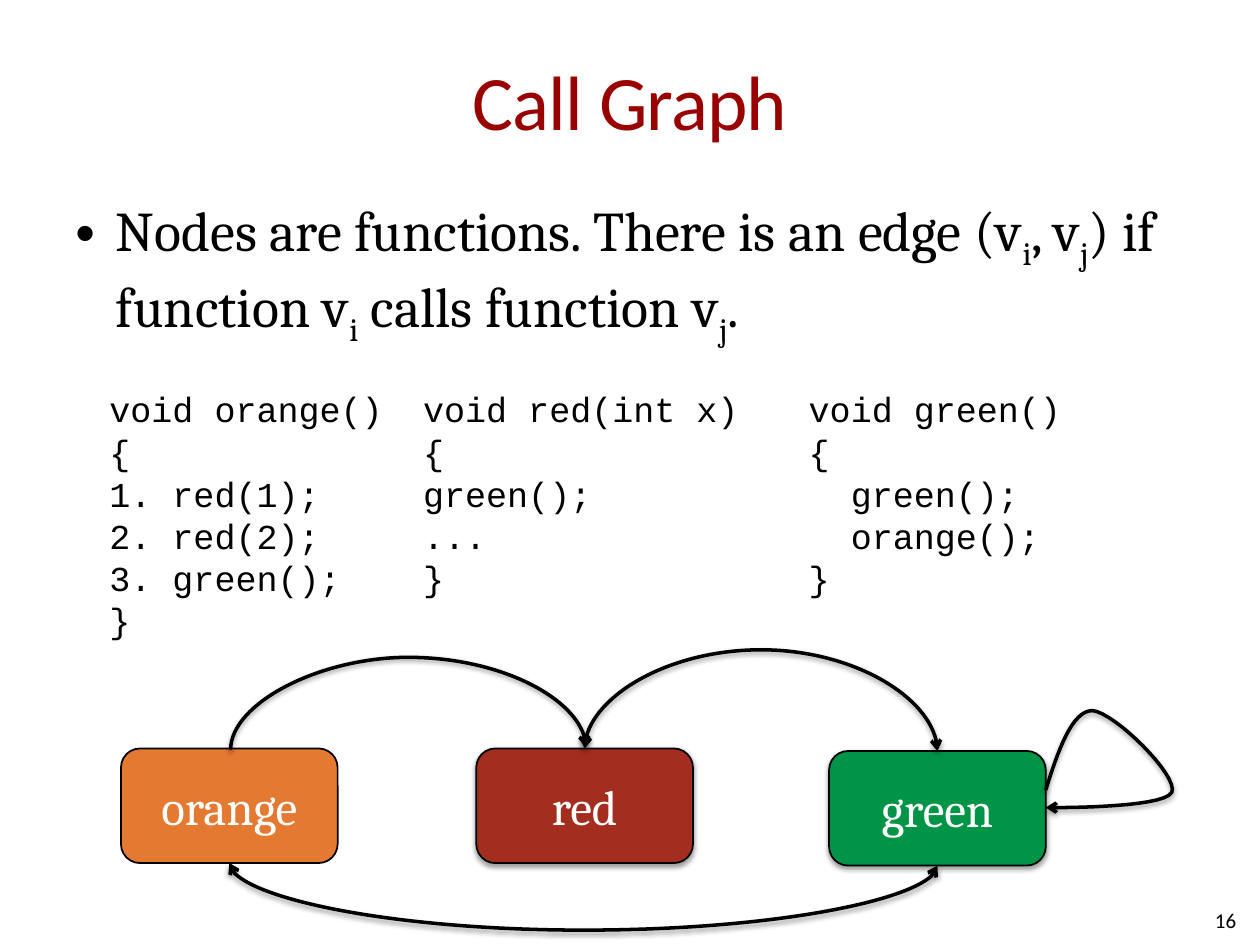
from lxml import etree
from pptx import Presentation
from pptx.dml.color import RGBColor
from pptx.enum.shapes import MSO_CONNECTOR, MSO_SHAPE
from pptx.enum.text import MSO_ANCHOR, PP_ALIGN
from pptx.oxml.ns import qn
from pptx.util import Inches, Pt

CURVE = MSO_CONNECTOR.CURVE
ROUND = MSO_SHAPE.ROUNDED_RECTANGLE
LEFT, CENTER, RIGHT = PP_ALIGN.LEFT, PP_ALIGN.CENTER, PP_ALIGN.RIGHT
TOP, MIDDLE = MSO_ANCHOR.TOP, MSO_ANCHOR.MIDDLE
CELL = Inches(0.1)  # the slide is a grid of 100 columns by 75 rows


def style(shape, size, font, color, align=LEFT, anchor=TOP):
    frame = shape.text_frame
    frame.word_wrap = True
    frame.vertical_anchor = anchor
    for para in frame.paragraphs:
        para.alignment = align
        for run in para.runs:
            run.font.size = Pt(size)
            run.font.name = font
            run.font.color.rgb = RGBColor.from_string(color)


def outline(shape, width, ends=(), shadow=True):
    shape.line.color.rgb = RGBColor.from_string("000000")
    shape.line.width = Pt(width)
    for end in ends:
        etree.SubElement(shape.line._get_or_add_ln(), qn(f"a:{end}"), type="arrow")
    effects = etree.SubElement(shape._element.spPr, qn("a:effectLst"))
    if shadow:
        drop = etree.SubElement(effects, qn("a:outerShdw"), blurRad=str(Pt(3.1)),
                                dist=str(Pt(1.6)), dir="5400000", rotWithShape="0")
        black = etree.SubElement(drop, qn("a:srgbClr"), val="000000")
        etree.SubElement(black, qn("a:alpha"), val="38000")


prs = Presentation()
prs.slide_width, prs.slide_height = 100 * CELL, 75 * CELL
slide = prs.slides.add_slide(prs.slide_layouts[5])
shapes = slide.shapes

# Title
title = shapes.title
title.left, title.top, title.width, title.height = (
    int(n * CELL) for n in (5, 1.7, 90, 12.5))
title.text_frame.text = "Call Graph"
title.text_frame.margin_left = title.text_frame.margin_right = 0
style(title, 44, "Calibri", "990000", CENTER, MIDDLE)
title.text_frame.paragraphs[0].runs[0]._r.get_or_add_rPr().set("spc", "-50")

# Definition, with every second run as a subscript
body = shapes.add_textbox(5 * CELL, 15 * CELL, 90 * CELL, 52 * CELL)
para = body.text_frame.paragraphs[0]
parts = ["Nodes are functions. There is an edge (v", "i", ", v", "j",
         ") if function v", "i", " calls function v", "j", "."]
for i, part in enumerate(parts):
    run = para.add_run()
    run.text = part
    if i % 2:
        run._r.get_or_add_rPr().set("baseline", "-25000")
style(body, 32, "Cambria", "000000")
para.space_before = Pt(6.4)
props = para._p.get_or_add_pPr()
props.set("marL", str(Inches(0.32)))
props.set("indent", str(-Inches(0.32)))
etree.SubElement(props, qn("a:buFont"), typeface="Arial")
etree.SubElement(props, qn("a:buChar"), char="•")

# Code of the three functions
codes = [
    (7.7, 21.2, "void orange()\n{\n1. red(1);\n2. red(2);\n3. green();\v}"),
    (32.6, 17.8, "void red(int x)\n{\ngreen();\n...\n}"),
    (63.2, 17.8, "void green()\n{\n  green();\n  orange();\n}"),
]
for col, rows, code in codes:
    box = shapes.add_textbox(int(col * CELL), int(30.3 * CELL),
                             int(35.2 * CELL), int(rows * CELL))
    box.text_frame.text = code
    style(box, 20, "Courier New", "000000")

# Nodes
nodes = [("orange", 9.6, 59.4, "E47932", False),
         ("red", 37.8, 59.4, "A32D1F", True),
         ("green", 65.8, 59.6, "009446", True)]
for name, col, row, color, shadow in nodes:
    node = shapes.add_shape(ROUND, int(col * CELL), int(row * CELL),
                            int(17.2 * CELL), int(9.1 * CELL))
    node.fill.solid()
    node.fill.fore_color.rgb = RGBColor.from_string(color)
    outline(node, 1, shadow=shadow)
    node.text_frame.text = name
    style(node, 28, "Cambria", "FFFFFE", CENTER, MIDDLE)

# Slide number
number = shapes.add_textbox(int(75.8 * CELL), 71 * CELL, int(23.3 * CELL), 4 * CELL)
number.text_frame.text = "16"
style(number, 12, "Calibri", "000000", RIGHT, MIDDLE)

# Arcs between nodes: a thin curved connector, turned on its side
# left end, right end, middle row, bulge, turn, flips, arrowheads
thin = 0.2
arcs = [
    (18.3, 46.5, 59.4, 7.3, 90, ("flipH", "flipV"), ("tailEnd",)),
    (46.4, 74.4, 59.5, -7.8, 270, ("flipH",), ("headEnd", "tailEnd")),
    (18.2, 74.4, 68.6, -5.1, 90, ("flipH",), ("headEnd", "tailEnd")),
]
for start, stop, row, bulge, turn, flips, ends in arcs:
    mid, span = (start + stop) / 2, stop - start
    arc = shapes.add_connector(
        CURVE, int((mid - thin / 2) * CELL), int((row - span / 2) * CELL),
        int((mid + thin / 2) * CELL), int((row + span / 2) * CELL))
    frame = arc._element.spPr.find(qn("a:xfrm"))
    frame.set("rot", str(turn * 60000))
    for flip in flips:
        frame.set(flip, "1")
    guides = arc._element.spPr.find(qn("a:prstGeom")).get_or_add_avLst()
    etree.SubElement(guides, qn("a:gd"), name="adj1",
                     fmla=f"val {round(bulge / thin * 100000)}")
    outline(arc, 2, ends)

# Loop from green to itself, traced along three Bézier curves
knots = [(83, 62.7), (84, 59.5), (85.1, 56.4), (86.7, 56.4), (88.4, 56.5),
         (93.6, 61.6), (93, 62.9), (92.3, 64.2), (83, 64.1), (83, 64.1)]
steps = 16
trace = []
for k in range(0, 9, 3):
    for s in range(1, steps + 1):
        t = s / steps
        shares = ((1 - t) ** 3, 3 * t * (1 - t) ** 2, 3 * t * t * (1 - t), t ** 3)
        trace.append(tuple(
            int(CELL * sum(w * p[axis] for w, p in zip(shares, knots[k:k + 4])))
            for axis in (0, 1)))
pen = shapes.build_freeform(int(knots[0][0] * CELL), int(knots[0][1] * CELL))
pen.add_line_segments(trace, close=False)
loop = pen.convert_to_shape()
loop.fill.background()
outline(loop, 2, ("tailEnd",))

prs.save("out.pptx")
